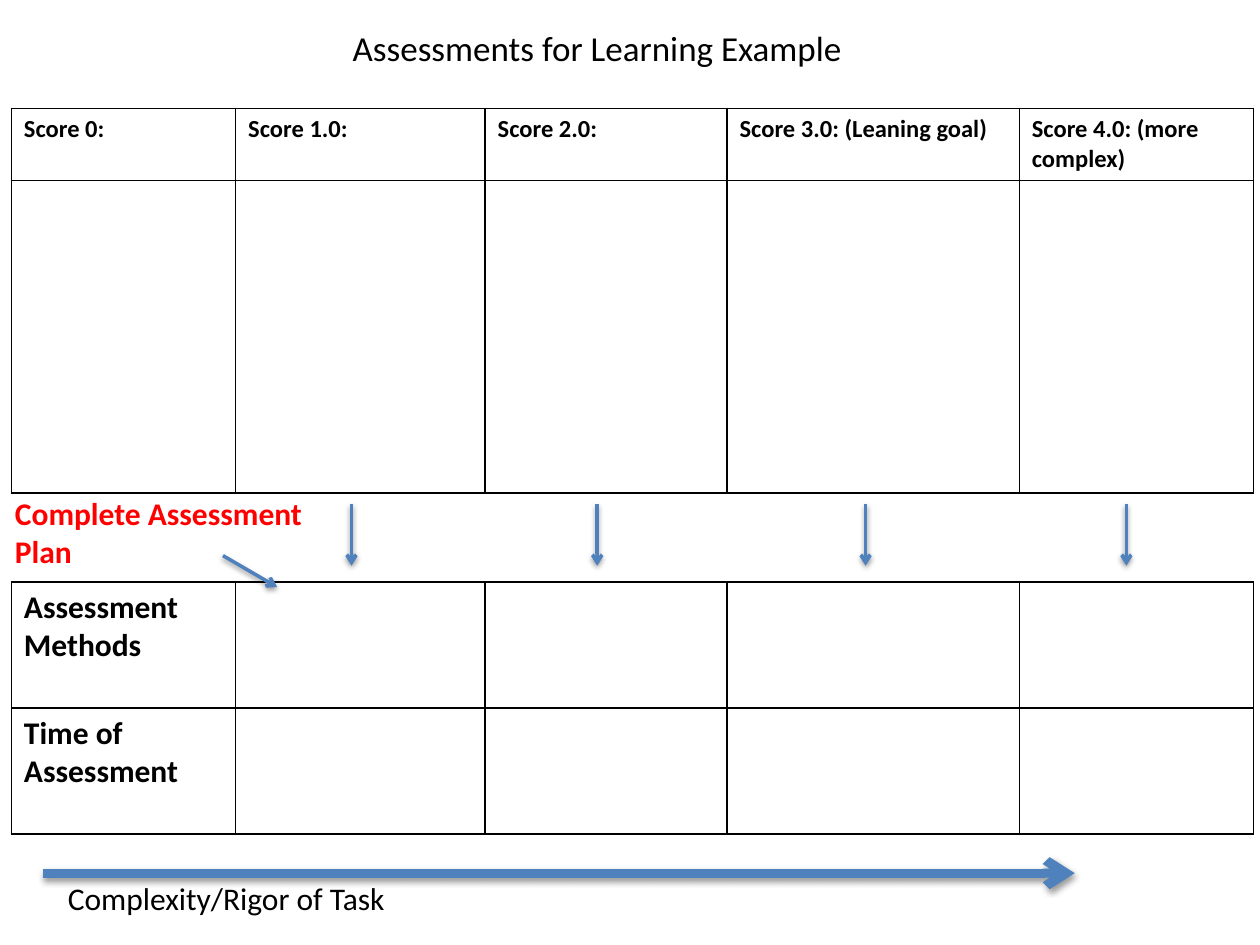
"""Build the slide of learning scores and the assessment plan."""
from lxml import etree
from pptx import Presentation
from pptx.dml.color import RGBColor
from pptx.enum.shapes import MSO_CONNECTOR as Link
from pptx.enum.text import MSO_ANCHOR as Anchor, MSO_AUTO_SIZE as Fit, PP_ALIGN as Align
from pptx.oxml import parse_xml
from pptx.oxml.ns import nsdecls, qn
from pptx.util import Inches, Pt

NS = nsdecls("a")
BLACK, BLUE, RED = "000000", "4F81BD", "FF0000"
SHADOW = (
    f'<a:effectLst {NS}><a:outerShdw blurRad="{Pt(3.1)}" dist="{Pt(1.6)}" '
    f'dir="5400000" rotWithShape="0"><a:srgbClr val="{BLACK}">'
    '<a:alpha val="38000"/></a:srgbClr></a:outerShdw></a:effectLst>'
)


def tint(code):
    return RGBColor.from_string(code)


def write(frame, text, size, bold=False, color=BLACK):
    frame.text = text
    font = frame.paragraphs[0].font
    font.name, font.size, font.bold = "Calibri", Pt(size), bold
    font.color.rgb = tint(color)


deck = Presentation()
deck.slide_width, deck.slide_height = Inches(10), Inches(7.5)
slide = deck.slides.add_slide(deck.slide_layouts[5])
shapes = slide.shapes

title = shapes.title
title.left, title.top = Inches(0.68), Inches(0.16)
title.width, title.height = Inches(8.12), Inches(0.44)
write(title.text_frame, "Assessments for Learning Example", 20)
title.text_frame.auto_size = Fit.NONE
title.text_frame.vertical_anchor = Anchor.TOP
title.text_frame.paragraphs[0].alignment = Align.CENTER

widths = [1.78, 1.98, 1.92, 2.32, 1.86]
scores = ["Score 0:", "Score 1.0:", "Score 2.0:",
          "Score 3.0: (Leaning goal)", "Score 4.0: (more complex)"]
blank = [""] * 4
tables = [
    (0.86, [0.56, 2.48], 14, [scores, [""] + blank]),
    (4.62, [1, 1], 18, [["Assessment Methods"] + blank, ["Time of Assessment"] + blank]),
]
for top, heights, size, rows in tables:
    table = shapes.add_table(2, 5, Inches(0.09), Inches(top),
                             Inches(sum(widths)), Inches(sum(heights))).table
    table.first_row = table.horz_banding = False
    for col, width in zip(table.columns, widths):
        col.width = Inches(width)
    for row, height, texts in zip(table.rows, heights, rows):
        row.height = Inches(height)
        for cell, text in zip(row.cells, texts):
            write(cell.text_frame, text, size, True)
            props = cell._tc.get_or_add_tcPr()
            for side in "LRTB":
                props.append(parse_xml(
                    f'<a:ln{side} {NS} w="{Pt(1)}"><a:solidFill>'
                    f'<a:srgbClr val="{BLACK}"/></a:solidFill></a:ln{side}>'))
            cell.fill.background()

arrows = [(x, 4, x, 4.49, 2) for x in (2.79, 4.74, 6.87, 8.94)]
arrows += [(0.34, 6.93, 8.53, 6.93, 5.25), (1.77, 4.41, 2.2, 4.66, 2)]
for *ends, weight in arrows:
    arrow = shapes.add_connector(Link.STRAIGHT, *map(Inches, ends))
    arrow.line.color.rgb = tint(BLUE)
    arrow.line.width = Pt(weight)
    etree.SubElement(arrow.line._get_or_add_ln(), qn("a:tailEnd"), type="arrow")
    arrow._element.spPr.append(parse_xml(SHADOW))

notes = [
    ("Complexity/Rigor of Task", 0.44, 6.93, 2.82, 0.4, False, BLACK),
    ("Complete Assessment Plan", 0.02, 3.87, 2.49, 0.71, True, RED),
]
for text, *place, bold, color in notes:
    frame = shapes.add_textbox(*map(Inches, place)).text_frame
    frame.word_wrap = bold
    write(frame, text, 18, bold, color)

deck.save("out.pptx")
